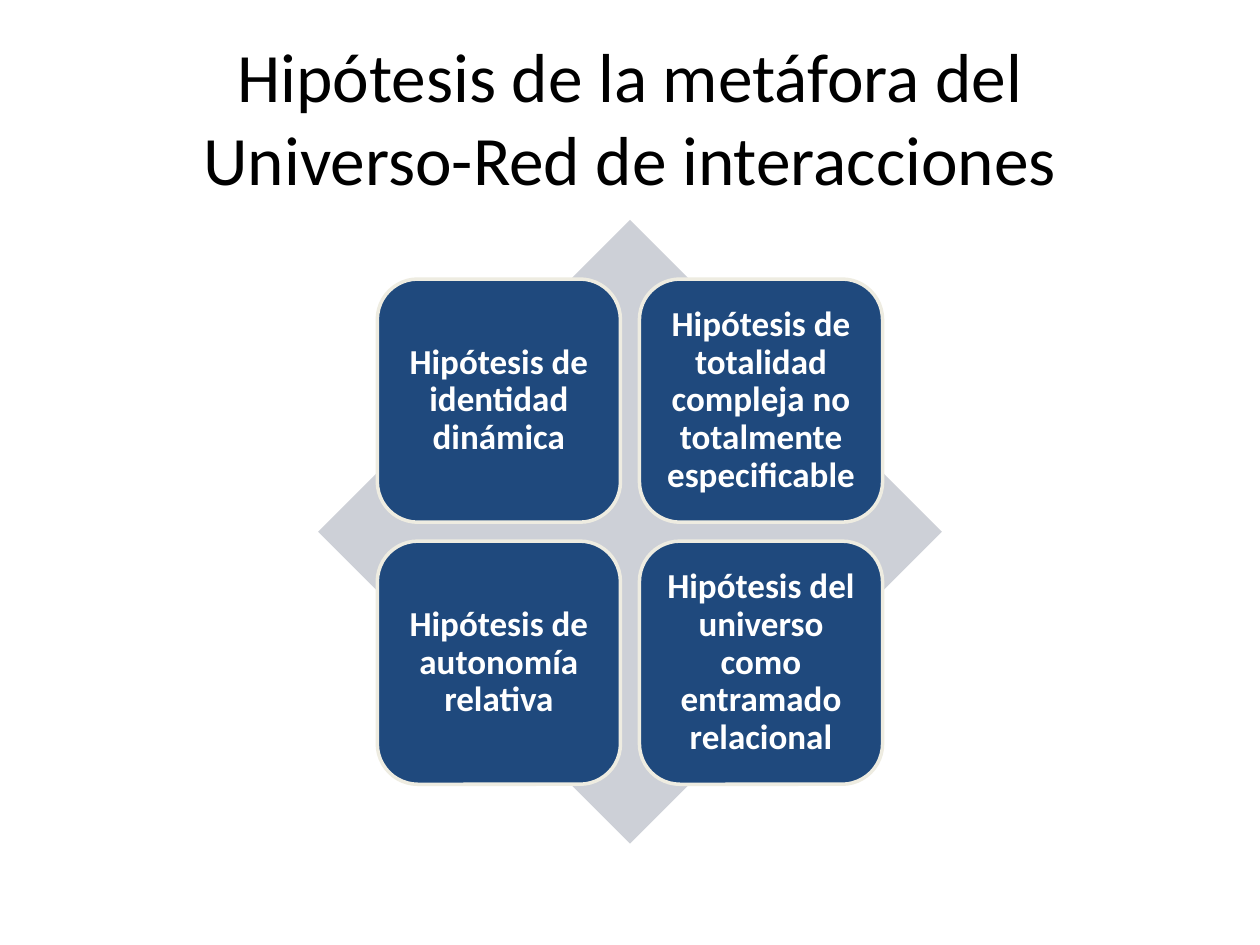
from dataclasses import dataclass

from pptx import Presentation
from pptx.dml.color import RGBColor
from pptx.enum.shapes import MSO_SHAPE
from pptx.enum.text import MSO_ANCHOR, PP_ALIGN
from pptx.shapes.autoshape import Shape
from pptx.slide import Slide
from pptx.text.text import TextFrame
from pptx.util import Inches, Pt


@dataclass(frozen=True)
class Theme:
    font: str = "Calibri"
    title_size: float = 39.6
    card_size: float = 20
    title_color: RGBColor = RGBColor(0x00, 0x00, 0x00)
    card_text: RGBColor = RGBColor(0xFF, 0xFF, 0xFF)
    card_fill: RGBColor = RGBColor(0x1F, 0x49, 0x7D)
    card_line: RGBColor = RGBColor(0xEE, 0xEC, 0xE1)
    diamond_fill: RGBColor = RGBColor(0xCD, 0xD0, 0xD7)


@dataclass(frozen=True)
class Hypothesis:
    text: str
    column: int
    row: int


THEME = Theme()
CENTER_X, CENTER_Y = 5.0, 4.22
DIAMOND_SIZE = 4.95
CARD_SIZE = 1.93
CARD_GAP = 0.15
CARD_INSET = 0.08

TITLE_LINES = ["Hipótesis de la metáfora del", "Universo-Red de interacciones"]
HYPOTHESES = [
    Hypothesis("Hipótesis de identidad dinámica", 0, 0),
    Hypothesis("Hipótesis de totalidad compleja no totalmente especificable", 1, 0),
    Hypothesis("Hipótesis de autonomía relativa", 0, 1),
    Hypothesis("Hipótesis del universo como entramado relacional", 1, 1),
]


def write_centered(
    frame: TextFrame, lines: list[str], size: float, color: RGBColor,
    bold: bool = False, line_spacing: float = 1.0,
) -> None:
    frame.word_wrap = True
    frame.vertical_anchor = MSO_ANCHOR.MIDDLE
    paragraph = frame.paragraphs[0]
    paragraph.alignment = PP_ALIGN.CENTER
    paragraph.line_spacing = line_spacing
    for index, line in enumerate(lines):
        if index:
            paragraph.add_line_break()
        run = paragraph.add_run()
        run.text = line
        run.font.name = THEME.font
        run.font.size = Pt(size)
        run.font.bold = bold
        run.font.color.rgb = color


def add_filled_square(
    slide: Slide, kind: MSO_SHAPE, left: float, top: float, size: float, fill: RGBColor
) -> Shape:
    shape = slide.shapes.add_shape(
        kind, Inches(left), Inches(top), Inches(size), Inches(size)
    )
    shape.shadow.inherit = False
    shape.fill.solid()
    shape.fill.fore_color.rgb = fill
    shape.line.fill.background()
    return shape


def add_title(slide: Slide) -> None:
    box = slide.shapes.add_textbox(Inches(0.5), Inches(0.3), Inches(9), Inches(1.25))
    write_centered(box.text_frame, TITLE_LINES, THEME.title_size, THEME.title_color)


def add_diamond(slide: Slide) -> None:
    add_filled_square(
        slide, MSO_SHAPE.DIAMOND, CENTER_X - DIAMOND_SIZE / 2,
        CENTER_Y - DIAMOND_SIZE / 2, DIAMOND_SIZE, THEME.diamond_fill,
    )


def add_card(slide: Slide, hypothesis: Hypothesis) -> None:
    pitch = CARD_SIZE + CARD_GAP
    offset = CARD_SIZE + CARD_GAP / 2
    card = add_filled_square(
        slide, MSO_SHAPE.ROUNDED_RECTANGLE,
        CENTER_X - offset + hypothesis.column * pitch,
        CENTER_Y - offset + hypothesis.row * pitch,
        CARD_SIZE, THEME.card_fill,
    )
    card.line.color.rgb = THEME.card_line
    card.line.width = Pt(2)
    frame = card.text_frame
    frame.margin_left = frame.margin_right = Inches(CARD_INSET)
    frame.margin_top = frame.margin_bottom = Inches(CARD_INSET)
    write_centered(
        frame, [hypothesis.text], THEME.card_size, THEME.card_text,
        bold=True, line_spacing=0.9,
    )


def main() -> None:
    presentation = Presentation()
    presentation.slide_width = Inches(10)
    presentation.slide_height = Inches(7.5)
    slide = presentation.slides.add_slide(presentation.slide_layouts[6])
    add_title(slide)
    add_diamond(slide)
    for hypothesis in HYPOTHESES:
        add_card(slide, hypothesis)
    presentation.save("out.pptx")


if __name__ == "__main__":
    main()
